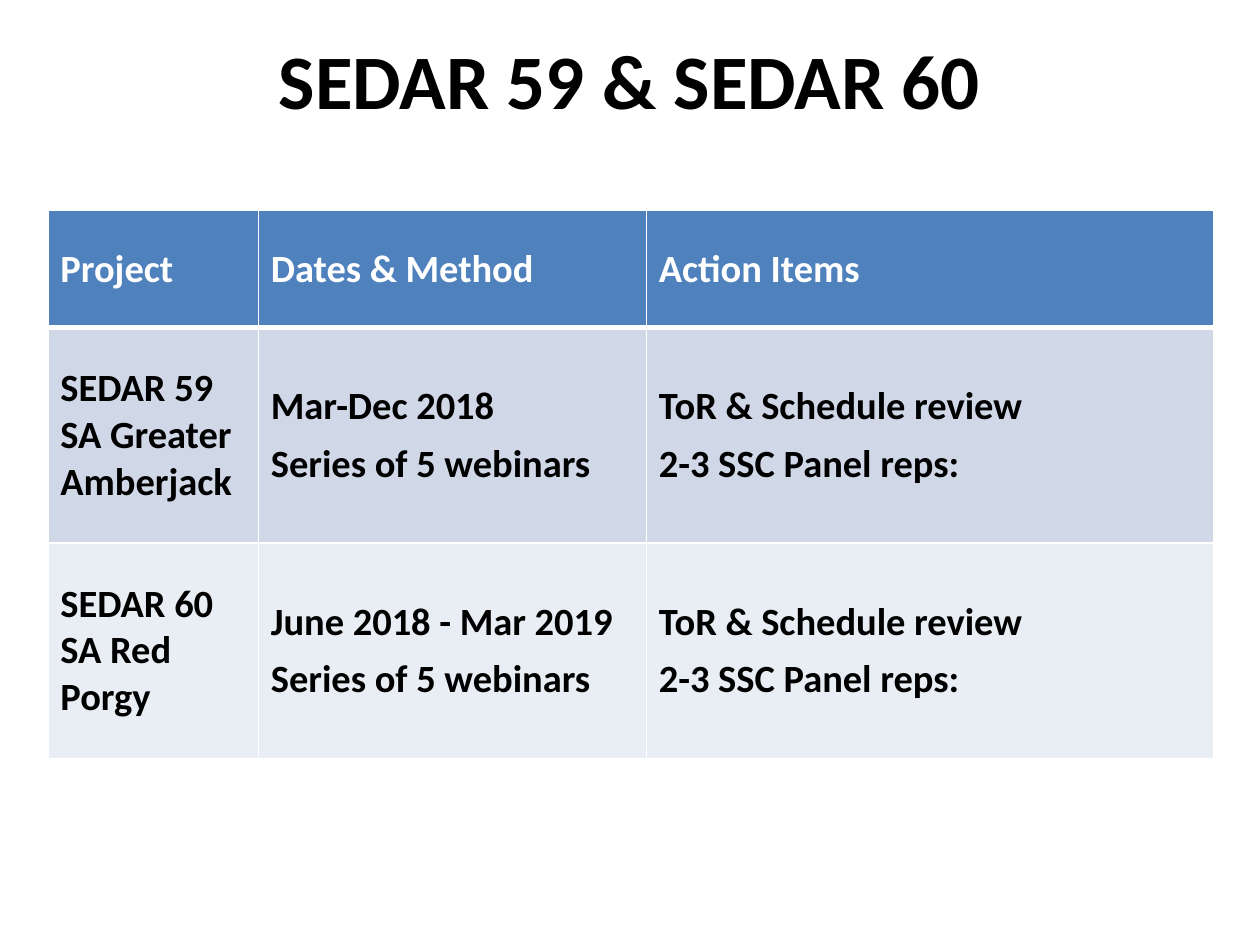
import dataclasses
import typing

import lxml.etree
import pptx
import pptx.dml.color
import pptx.enum.text
import pptx.oxml.ns
import pptx.util


@dataclasses.dataclass(frozen=True)
class Theme:
    font: str = "Calibri"
    title_size: float = 44
    table_size: float = 22
    dark: str = "000000"
    light: str = "FFFFFF"
    header_fill: str = "4F81BD"
    band_fills: tuple[str, str] = ("D0D8E8", "E9EDF4")
    border_width: float = 1
    header_rule_width: float = 3
    item_gap: float = 6


@dataclasses.dataclass(frozen=True)
class Project:
    name: str
    schedule: tuple[str, ...]
    actions: tuple[str, ...]


@dataclasses.dataclass(frozen=True)
class CellStyle:
    fill: str
    color: str
    top_width: float
    bottom_width: float


THEME = Theme()
HEADINGS = ("Project", "Dates & Method", "Action Items")
ACTIONS = ("ToR & Schedule review", "2-3 SSC Panel reps:")
PROJECTS = (
    Project("SEDAR 59 SA Greater Amberjack", ("Mar-Dec 2018", "Series of 5 webinars"), ACTIONS),
    Project("SEDAR 60 SA Red Porgy", ("June 2018 - Mar 2019", "Series of 5 webinars"), ACTIONS),
)
COLUMN_WIDTHS = (1.67, 3.08, 4.5)
ROW_HEIGHTS = (0.93, 1.71, 1.71)


def write_lines(frame: typing.Any, lines: tuple[str, ...], size: float, color: str,
                paragraph_format: dict[str, typing.Any]) -> None:
    font_format = {"name": THEME.font, "size": pptx.util.Pt(size), "bold": True}
    for index, line in enumerate(lines):
        para = frame.add_paragraph() if index else frame.paragraphs[0]
        for name, value in paragraph_format.items():
            setattr(para, name, value)
        span = para.add_run()
        span.text = line
        for name, value in font_format.items():
            setattr(span.font, name, value)
        span.font.color.rgb = pptx.dml.color.RGBColor.from_string(color)


def draw_borders(cell: typing.Any, style: CellStyle) -> None:
    properties = cell._tc.get_or_add_tcPr()
    widths = {"lnL": THEME.border_width, "lnR": THEME.border_width,
              "lnT": style.top_width, "lnB": style.bottom_width}
    for index, (edge, width) in enumerate(widths.items()):
        line = lxml.etree.Element(pptx.oxml.ns.qn(f"a:{edge}"), w=str(pptx.util.Pt(width)))
        fill = lxml.etree.SubElement(line, pptx.oxml.ns.qn("a:solidFill"))
        lxml.etree.SubElement(fill, pptx.oxml.ns.qn("a:srgbClr"), val=THEME.light)
        properties.insert(index, line)


def draw_cell(cell: typing.Any, lines: tuple[str, ...], style: CellStyle) -> None:
    cell.vertical_anchor = pptx.enum.text.MSO_ANCHOR.MIDDLE
    cell.fill.solid()
    cell.fill.fore_color.rgb = pptx.dml.color.RGBColor.from_string(style.fill)
    spacing = {"space_after": pptx.util.Pt(THEME.item_gap)} if len(lines) > 1 else {}
    write_lines(cell.text_frame, lines, THEME.table_size, style.color, spacing)
    draw_borders(cell, style)


def draw_title(page: typing.Any, title: str) -> None:
    box = page.shapes.add_textbox(0, 0, pptx.util.Inches(10), pptx.util.Inches(1.25))
    frame_format = {"word_wrap": True, "vertical_anchor": pptx.enum.text.MSO_ANCHOR.MIDDLE}
    for name, value in frame_format.items():
        setattr(box.text_frame, name, value)
    write_lines(box.text_frame, (title,), THEME.title_size, THEME.dark,
                {"alignment": pptx.enum.text.PP_ALIGN.CENTER})


def draw_project_table(page: typing.Any, projects: tuple[Project, ...]) -> None:
    table = page.shapes.add_table(
        len(ROW_HEIGHTS), len(COLUMN_WIDTHS), pptx.util.Inches(0.38), pptx.util.Inches(1.67),
        pptx.util.Inches(sum(COLUMN_WIDTHS)), pptx.util.Inches(sum(ROW_HEIGHTS))).table
    for column, width in zip(table.columns, COLUMN_WIDTHS):
        column.width = pptx.util.Inches(width)
    for row, height in zip(table.rows, ROW_HEIGHTS):
        row.height = pptx.util.Inches(height)

    thin, thick = THEME.border_width, THEME.header_rule_width
    rows = [tuple((heading,) for heading in HEADINGS)]
    rows += [((project.name,), project.schedule, project.actions) for project in projects]
    styles = [CellStyle(THEME.header_fill, THEME.light, thin, thick)]
    for index in range(len(projects)):
        fill = THEME.band_fills[index % len(THEME.band_fills)]
        styles.append(CellStyle(fill, THEME.dark, thin if index else thick, thin))
    for row, contents, style in zip(table.rows, rows, styles):
        for cell, lines in zip(row.cells, contents):
            draw_cell(cell, lines, style)


def main() -> None:
    deck = pptx.Presentation()
    deck.slide_width = pptx.util.Inches(10)
    deck.slide_height = pptx.util.Inches(7.5)
    page = deck.slides.add_slide(deck.slide_layouts[6])
    draw_title(page, "SEDAR 59 & SEDAR 60")
    draw_project_table(page, PROJECTS)
    deck.save("out.pptx")


if __name__ == "__main__":
    main()
